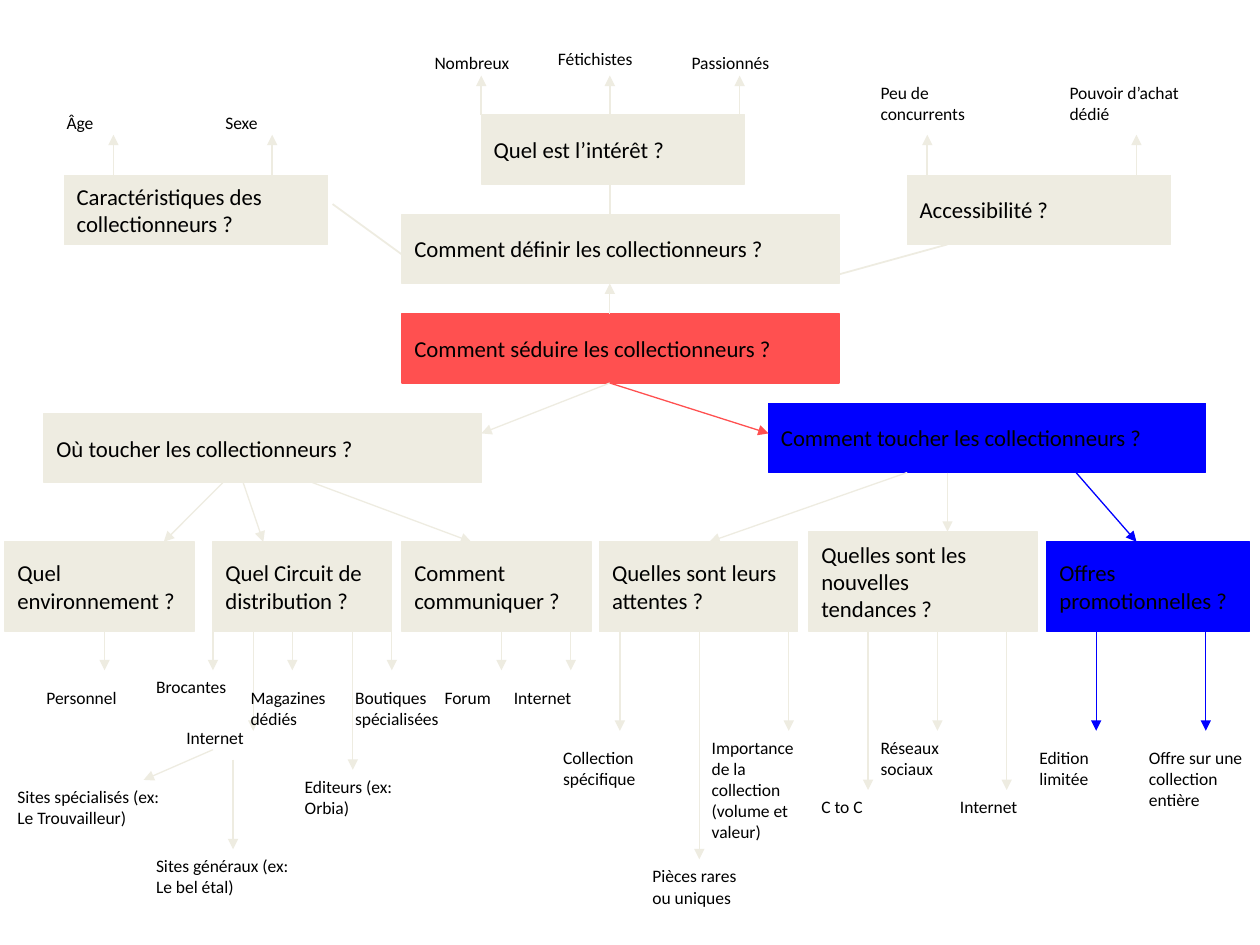
from dataclasses import dataclass

import lxml.etree
import pptx
import pptx.dml.color
import pptx.enum.shapes
import pptx.enum.text
import pptx.oxml.ns
import pptx.util

Inches = pptx.util.Inches
Pt = pptx.util.Pt
qn = pptx.oxml.ns.qn

COLORS = {"beige": "EEECE1", "red": "FF5050", "blue": "0000FF", "text": "000000"}
FONT = "Calibri"


@dataclass
class Box:
    text: str
    left: float
    top: float
    width: float
    height: float = 0.55
    color: str = "beige"
    wrap: bool = False


@dataclass
class Link:
    x1: float
    y1: float
    x2: float
    y2: float
    color: str = "beige"
    weight: float = 0.75
    arrow: bool = True


@dataclass
class Label:
    text: str
    left: float
    top: float
    height: float = 0.27
    width: float = 0.98


def rgb(name: str) -> pptx.dml.color.RGBColor:
    return pptx.dml.color.RGBColor.from_string(COLORS[name])


def format_text(tf, size: float) -> None:
    for p in tf.paragraphs:
        p.alignment = pptx.enum.text.PP_ALIGN.LEFT
        for r in p.runs:
            r.font.name = FONT
            r.font.size = Pt(size)
            r.font.color.rgb = rgb("text")


def draw_box(s, box: Box) -> None:
    sp = s.shapes.add_shape(
        pptx.enum.shapes.MSO_SHAPE.RECTANGLE,
        Inches(box.left), Inches(box.top), Inches(box.width), Inches(box.height))
    sp.shadow.inherit = False
    sp.fill.solid()
    sp.fill.fore_color.rgb = rgb(box.color)
    sp.line.color.rgb = rgb(box.color)
    sp.line.width = Pt(0.75)
    tf = sp.text_frame
    tf.word_wrap = box.wrap
    tf.vertical_anchor = pptx.enum.text.MSO_ANCHOR.MIDDLE
    tf.text = box.text
    format_text(tf, 13)


def draw_link(s, link: Link) -> None:
    cn = s.shapes.add_connector(
        pptx.enum.shapes.MSO_CONNECTOR.STRAIGHT,
        Inches(link.x1), Inches(link.y1), Inches(link.x2), Inches(link.y2))
    cn.line.color.rgb = rgb(link.color)
    cn.line.width = Pt(link.weight)
    if link.arrow:
        ln = cn.line._get_or_add_ln()
        lxml.etree.SubElement(ln, qn("a:tailEnd"), type="triangle")
    lxml.etree.SubElement(cn._element.spPr, qn("a:effectLst"))


def draw_label(s, label: Label) -> None:
    sp = s.shapes.add_textbox(
        Inches(label.left), Inches(label.top), Inches(label.width), Inches(label.height))
    tf = sp.text_frame
    tf.word_wrap = True
    tf.auto_size = pptx.enum.text.MSO_AUTO_SIZE.SHAPE_TO_FIT_TEXT
    tf.text = label.text
    format_text(tf, 10)


def vertical_links(xs: list[float], y1: float, y2: float,
                   color: str = "beige", weight: float = 0.75) -> list[Link]:
    return [Link(x, y1, x, y2, color, weight) for x in xs]


BOXES = [
    Box("Comment séduire les collectionneurs ?", 3.19, 2.49, 3.47, color="red"),
    Box("Comment toucher les collectionneurs ?", 6.1, 3.2, 3.47, color="blue"),
    Box("Où toucher les collectionneurs ?", 0.35, 3.28, 3.47),
    Box("Comment définir les collectionneurs ?", 3.19, 1.7, 3.47),
    Box("Caractéristiques des\ncollectionneurs ?", 0.51, 1.39, 2.09),
    Box("Quel est l’intérêt ?", 3.82, 0.91, 2.09),
    Box("Accessibilité ?", 7.2, 1.39, 2.09),
    Box("Quel environnement ?", 0.04, 4.3, 1.5, 0.71, wrap=True),
    Box("Quel Circuit de distribution ?", 1.69, 4.3, 1.42, 0.71, wrap=True),
    Box("Comment communiquer ?", 3.19, 4.3, 1.5, 0.71, wrap=True),
    Box("Quelles sont leurs attentes ?", 4.76, 4.3, 1.57, 0.71, wrap=True),
    Box("Quelles sont les nouvelles tendances ?", 6.42, 4.22, 1.81, 0.79, wrap=True),
    Box("Offres promotionnelles ?", 8.31, 4.3, 1.61, 0.71, "blue", True),
]

LINKS = [
    Link(4.84, 1.7, 4.84, 1.47, weight=1, arrow=False),
    Link(6.65, 2.18, 7.52, 1.94, weight=1, arrow=False),
    Link(3.19, 2.02, 2.64, 1.62, weight=1, arrow=False),
    Link(4.84, 2.49, 4.84, 2.25),
    Link(4.84, 3.04, 3.82, 3.44),
    Link(4.84, 3.04, 6.1, 3.44, "red"),
    Link(1.77, 3.83, 1.3, 4.3),
    Link(1.93, 3.83, 2.09, 4.3),
    Link(2.48, 3.83, 3.74, 4.3),
    Link(7.2, 3.75, 5.63, 4.3),
    Link(7.52, 3.75, 7.52, 4.22),
    Link(8.54, 3.75, 9.02, 4.3, "blue"),
    Link(1.85, 6.03, 1.85, 6.74),
    Link(1.69, 5.95, 1.14, 6.19),
    *vertical_links([0.9, 2.16, 7.36, 9.02], 1.39, 1.07, weight=1),
    *vertical_links([3.82, 4.84, 5.87], 0.91, 0.6, weight=1),
    *vertical_links([0.83, 1.69, 2.32, 3.11, 3.98, 4.53], 5.01, 5.32),
    *vertical_links([2.01, 4.92, 6.26, 7.44], 5.01, 5.8),
    *vertical_links([8.7, 9.57], 5.01, 5.8, "blue"),
    *vertical_links([2.8], 5.01, 6.11),
    *vertical_links([6.89, 7.99], 5.01, 6.27),
    *vertical_links([5.55], 5.01, 6.82),
]

LABELS = [
    Label("Âge", 0.43, 0.84),
    Label("Sexe", 1.69, 0.84),
    Label("Nombreux", 3.35, 0.36),
    Label("Fétichistes", 4.33, 0.33),
    Label("Passionnés", 5.39, 0.36),
    Label("Peu de concurrents", 6.89, 0.6, 0.43),
    Label("Pouvoir d’achat dédié", 8.39, 0.6, 0.43, 1.18),
    Label("Personnel", 0.27, 5.4),
    Label("Brocantes", 1.14, 5.32),
    Label("Internet", 1.38, 5.72),
    Label("Sites spécialisés (ex: Le Trouvailleur)", 0.04, 6.19, 0.6, 1.34),
    Label("Sites généraux (ex: Le bel étal)", 1.14, 6.74, 0.43, 1.34),
    Label("Boutiques spécialisées", 2.72, 5.4, 0.43),
    Label("Forum", 3.43, 5.4),
    Label("Internet", 3.98, 5.4),
    Label("Collection spécifique", 4.37, 5.88, 0.43),
    Label("Pièces rares ou uniques", 5.08, 6.82, 0.43),
    Label("Importance de la collection (volume et valeur)", 5.55, 5.8, 0.93),
    Label("C to C", 6.42, 6.27),
    Label("Réseaux sociaux", 6.89, 5.8, 0.43),
    Label("Internet", 7.52, 6.27),
    Label("Edition limitée", 8.15, 5.88, 0.43),
    Label("Offre sur une collection entière", 9.02, 5.88, 0.77),
    Label("Magazines dédiés", 1.89, 5.4, 0.43),
    Label("Editeurs (ex: Orbia)", 2.32, 6.11, 0.43, 0.95),
]


def main() -> None:
    prs = pptx.Presentation()
    prs.slide_width = Inches(10)
    prs.slide_height = Inches(7.5)
    s = prs.slides.add_slide(prs.slide_layouts[6])
    for box in BOXES:
        draw_box(s, box)
    for link in LINKS:
        draw_link(s, link)
    for label in LABELS:
        draw_label(s, label)
    prs.save("out.pptx")


if __name__ == "__main__":
    main()
